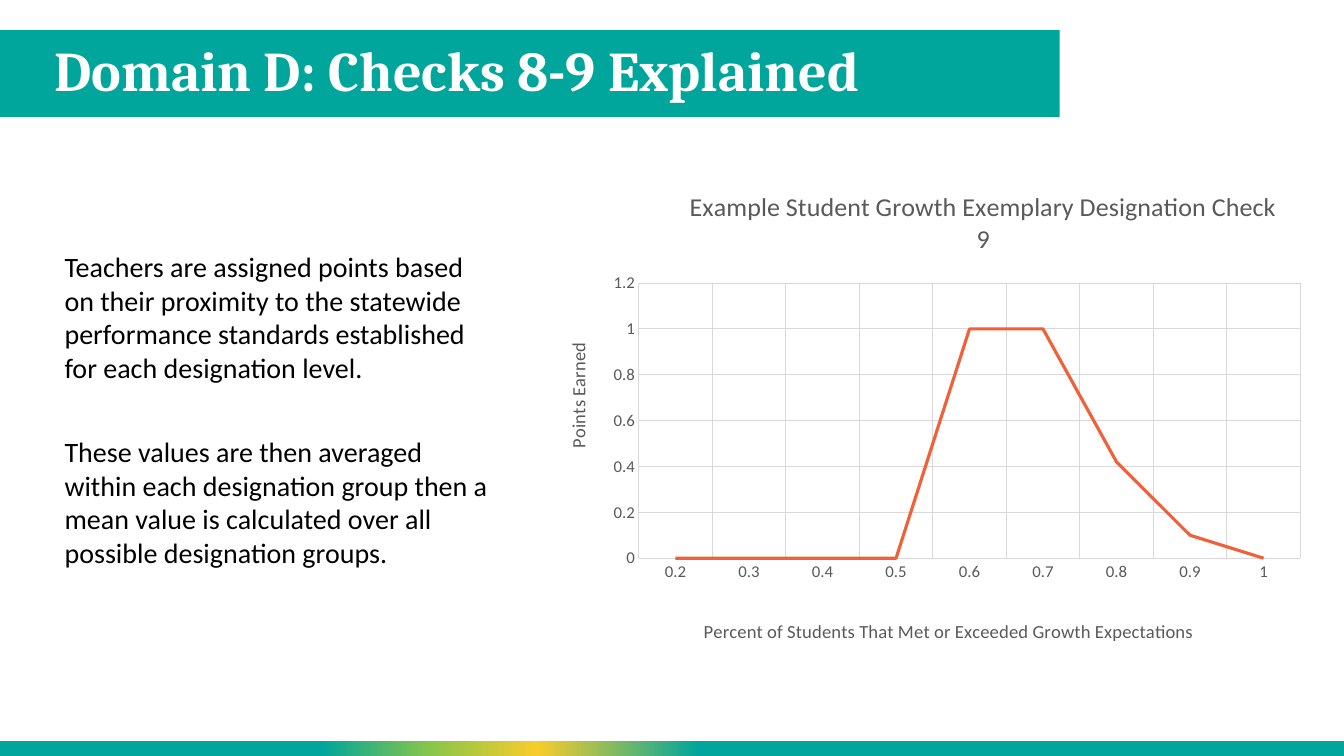
from dataclasses import dataclass

from lxml import etree
from pptx import Presentation
from pptx.chart.data import CategoryChartData
from pptx.dml.color import RGBColor
from pptx.enum.chart import XL_CHART_TYPE, XL_MARKER_STYLE, XL_TICK_MARK
from pptx.enum.shapes import MSO_SHAPE
from pptx.enum.text import MSO_ANCHOR, PP_ALIGN
from pptx.oxml.ns import qn
from pptx.util import Inches, Pt

LINE_CHART = XL_CHART_TYPE.LINE
NO_MARKER = XL_MARKER_STYLE.NONE
NO_TICK = XL_TICK_MARK.NONE
RECTANGLE = MSO_SHAPE.RECTANGLE
MIDDLE = MSO_ANCHOR.MIDDLE
LEFT = PP_ALIGN.LEFT


@dataclass(frozen=True)
class Theme:
    heading_font: str = "Cambria"
    body_font: str = "Calibri"
    teal: str = "00A69B"
    green: str = "87C54A"
    yellow: str = "F8CC2B"
    orange: str = "F16038"
    white: str = "FFFFFF"
    black: str = "000000"
    label: str = "595959"
    grid: str = "D9D9D9"
    heading_size: float = 40
    body_size: float = 20
    chart_title_size: float = 18.6
    axis_title_size: float = 13.3
    tick_size: float = 12


def style_font(font, name, size, color, bold=False):
    font.name = name
    font.size = Pt(size)
    font.bold = bold
    font.color.rgb = RGBColor.from_string(color)


def write_text(paragraph, text, *, font, size, color, bold=False,
               align=LEFT, before=0, spacing=1.0):
    paragraph.alignment = align
    paragraph.space_before = Pt(before)
    paragraph.space_after = Pt(0)
    paragraph.line_spacing = spacing
    run = paragraph.add_run()
    run.text = text
    style_font(run.font, font, size, color, bold)


def set_layout(parent, index, **fractions):
    for old in parent.findall(qn("c:layout")):
        parent.remove(old)
    layout = etree.Element(qn("c:layout"))
    parent.insert(index, layout)
    manual = etree.SubElement(layout, qn("c:manualLayout"))
    if "w" in fractions:
        etree.SubElement(manual, qn("c:layoutTarget"), val="inner")
    for axis in ("x", "y"):
        etree.SubElement(manual, qn(f"c:{axis}Mode"), val="edge")
    for key, value in fractions.items():
        etree.SubElement(manual, qn(f"c:{key}"), val=str(value))


class SlideBuilder:
    def __init__(self, presentation, theme):
        self.theme = theme
        self.slide = presentation.slides.add_slide(presentation.slide_layouts[5])

    def band(self, left, top, width, height, color):
        band = self.slide.shapes.add_shape(
            RECTANGLE, Inches(left), Inches(top), Inches(width), Inches(height))
        band.shadow.inherit = False
        band.line.fill.background()
        band.fill.solid()
        band.fill.fore_color.rgb = RGBColor.from_string(color)
        return band

    def gradient_band(self, left, top, width, height, stops):
        band = self.band(left, top, width, height, self.theme.teal)
        band.fill.gradient()
        band.fill.gradient_angle = 0
        stop_list = band.element.spPr.find(qn("a:gradFill")).find(qn("a:gsLst"))
        for old in list(stop_list):
            stop_list.remove(old)
        for percent, color in stops:
            stop = etree.SubElement(stop_list, qn("a:gs"), pos=str(percent * 1000))
            etree.SubElement(stop, qn("a:srgbClr"), val=color)

    def title(self, text, left, top, width, height):
        heading = self.slide.shapes.title
        heading.left, heading.top = Inches(left), Inches(top)
        heading.width, heading.height = Inches(width), Inches(height)
        heading.text_frame.vertical_anchor = MIDDLE
        heading.text_frame.word_wrap = True
        write_text(heading.text_frame.paragraphs[0], text,
                   font=self.theme.heading_font, size=self.theme.heading_size,
                   color=self.theme.white, bold=True, spacing=0.9)
        heading.element.getparent().append(heading.element)

    def body(self, texts, left, top, width, height, gap):
        frame = self.slide.shapes.add_textbox(
            Inches(left), Inches(top), Inches(width), Inches(height)).text_frame
        frame.word_wrap = True
        frame.vertical_anchor = MIDDLE
        frame.margin_left = Inches(0.2)
        for index, text in enumerate(texts):
            paragraph = frame.add_paragraph() if index else frame.paragraphs[0]
            write_text(paragraph, text, font=self.theme.body_font,
                       size=self.theme.body_size, color=self.theme.black,
                       before=gap if index else 0)

    def chart_label(self, label, text, size, x, y, rotation=0):
        write_text(label.text_frame.paragraphs[0], text, font=self.theme.body_font,
                   size=size, color=self.theme.label, align=PP_ALIGN.CENTER)
        label.element.find(".//" + qn("a:bodyPr")).set("rot", str(rotation * 60000))
        set_layout(label.element, 1, x=x, y=y)

    def axis(self, axis, text, x, y, rotation=0):
        axis.has_major_gridlines = True
        grid_line = axis.major_gridlines.format.line
        grid_line.color.rgb = RGBColor.from_string(self.theme.grid)
        grid_line.width = Pt(0.75)
        axis.major_tick_mark = axis.minor_tick_mark = NO_TICK
        style_font(axis.tick_labels.font, self.theme.body_font,
                   self.theme.tick_size, self.theme.label)
        self.chart_label(axis.axis_title, text, self.theme.axis_title_size,
                         x, y, rotation)

    def line_chart(self, title, categories, values, left, top, width, height):
        data = CategoryChartData()
        data.categories = categories
        data.add_series("Series 1", values)
        chart = self.slide.shapes.add_chart(
            LINE_CHART, Inches(left), Inches(top), Inches(width), Inches(height),
            data).chart
        chart.has_legend = False
        style_font(chart.font, self.theme.body_font, 10, self.theme.black)
        self.chart_label(chart.chart_title, title, self.theme.chart_title_size,
                         x=0.18, y=0.03)

        plot = chart.plots[0]
        plot.vary_by_categories = False
        points = plot.series[0]
        points.smooth = False
        points.marker.style = NO_MARKER
        points.format.line.color.rgb = RGBColor.from_string(self.theme.orange)
        points.format.line.width = Pt(2.25)

        self.axis(chart.category_axis,
                  "Percent of Students That Met or Exceeded Growth Expectations",
                  x=0.2, y=0.94)
        category_line = chart.category_axis.format.line
        category_line.color.rgb = RGBColor.from_string(self.theme.grid)
        category_line.width = Pt(0.75)

        self.axis(chart.value_axis, "Points Earned", x=0.02, y=0.36, rotation=-90)
        chart.value_axis.format.line.fill.background()
        chart.value_axis.minimum_scale = 0
        chart.value_axis.maximum_scale = 1.2
        chart.value_axis.major_unit = 0.2
        plot_area = chart.element.find(".//" + qn("c:plotArea"))
        set_layout(plot_area, 0, x=0.12, y=0.24, w=0.86, h=0.58)


def main():
    presentation = Presentation()
    presentation.slide_width = Inches(13.33)
    presentation.slide_height = Inches(7.5)
    theme = Theme()
    builder = SlideBuilder(presentation, theme)
    builder.band(-0.01, 0.3, 10.52, 0.86, theme.teal)
    builder.gradient_band(-0.01, 7.35, 13.34, 0.15, [
        (0, theme.teal), (24, theme.teal), (32, theme.green),
        (40, theme.yellow), (52, theme.teal), (100, theme.teal)])
    builder.title("Domain D: Checks 8-9 Explained", 0.44, 0.3, 10.06, 0.86)
    builder.body([
        "Teachers are assigned points based on their proximity to the statewide "
        "performance standards established for each designation level.",
        "These values are then averaged within each designation group then a "
        "mean value is calculated over all possible designation groups.",
    ], 0.44, 1.68, 4.51, 4.76, gap=36)
    builder.line_chart(
        "Example Student Growth Exemplary Designation Check 9",
        ["0.2", "0.3", "0.4", "0.5", "0.6", "0.7", "0.8", "0.9", "1"],
        [0, 0, 0, 0, 1, 1, 0.42, 0.1, 0], 5.42, 1.68, 7.63, 4.76)
    presentation.save("out.pptx")


if __name__ == "__main__":
    main()
